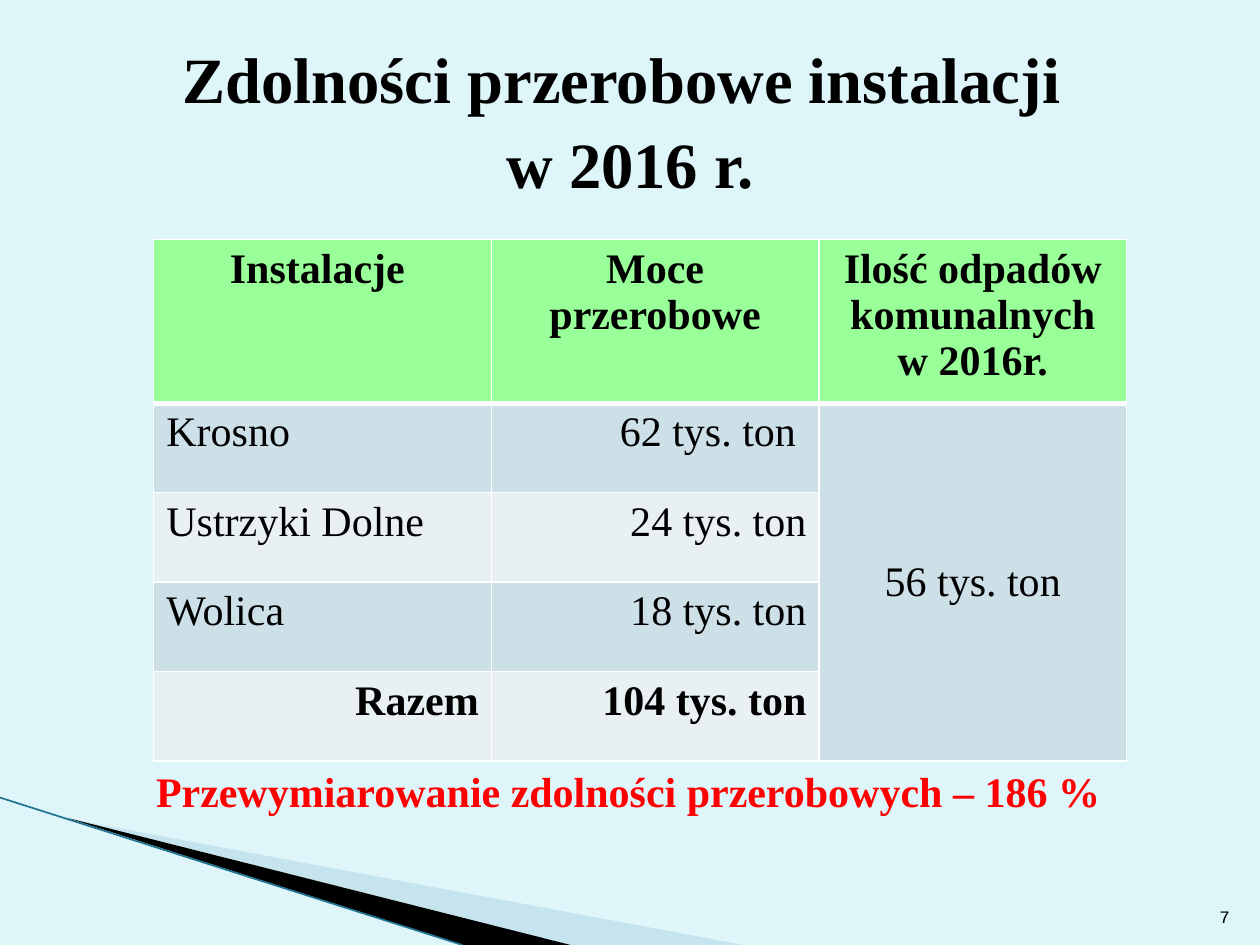
from dataclasses import dataclass

from lxml import etree
from pptx import Presentation
from pptx.dml.color import RGBColor
from pptx.enum.shapes import MSO_CONNECTOR
from pptx.enum.text import MSO_ANCHOR, PP_ALIGN
from pptx.oxml.ns import qn
from pptx.util import Inches, Pt

LEFT, MID, RIGHT = PP_ALIGN.LEFT, PP_ALIGN.CENTER, PP_ALIGN.RIGHT
TOP, CENTER, BOTTOM = MSO_ANCHOR.TOP, MSO_ANCHOR.MIDDLE, MSO_ANCHOR.BOTTOM
STRAIGHT = MSO_CONNECTOR.STRAIGHT
WIDE, HIGH = 10, 7.5


@dataclass(frozen=True)
class Theme:
    back: str = "DEF5FA"
    ink: str = "000000"
    alert: str = "FF0000"
    head: str = "99FF99"
    bands: tuple = ("CDE0E8", "E8F0F4")
    rule: str = "FFFFFF"
    wedge: str = "A0CBDC"
    edge: str = "1F7391"
    font: str = "Times New Roman"
    mono: str = "Courier New"
    title: float = 36.9
    body: float = 24
    small: float = 10


LOOK = Theme()
HEADS = ("Instalacje ", "Moce przerobowe", "Ilość odpadów komunalnych w 2016r.")
ROWS = (
    ("Krosno", "62 tys. ton "),
    ("Ustrzyki Dolne", "24 tys. ton"),
    ("Wolica", "18 tys. ton"),
    ("Razem", "104 tys. ton"),
)
WASTE = "56 tys. ton"


def rgb(code):
    return RGBColor.from_string(code)


def style(para, size, color, bold=False, align=LEFT, font=LOOK.font):
    para.alignment = align
    para.font.name = font
    para.font.size = Pt(size)
    para.font.bold = bold
    para.font.color.rgb = rgb(color)


def label(slide, box, text, size, color, anchor=TOP, **kind):
    frame = slide.shapes.add_textbox(*map(Inches, box)).text_frame
    frame.word_wrap = True
    frame.vertical_anchor = anchor
    frame.text = text
    style(frame.paragraphs[0], size, color, **kind)
    return frame.paragraphs[0]


def wedge(slide, points, color, alpha=None):
    first, *rest = [tuple(map(Inches, spot)) for spot in points]
    path = slide.shapes.build_freeform(*first)
    path.add_line_segments(rest, close=True)
    shape = path.convert_to_shape()
    shape.shadow.inherit = False
    shape.line.fill.background()
    shape.fill.solid()
    shape.fill.fore_color.rgb = rgb(color)
    if alpha:
        tint = shape.fill._xPr.find(".//" + qn("a:srgbClr"))
        etree.SubElement(tint, qn("a:alpha"), val=str(alpha * 1000))


def stroke(slide, start, end, color, width):
    line = slide.shapes.add_connector(STRAIGHT, *map(Inches, start + end))
    line.line.color.rgb = rgb(color)
    line.line.width = Pt(width)
    etree.SubElement(line._element.spPr, qn("a:effectLst"))


def border(cell, top=1, bottom=1):
    props = cell._tc.get_or_add_tcPr()
    for side, width in (("L", 1), ("R", 1), ("T", top), ("B", bottom)):
        line = etree.SubElement(props, qn("a:ln" + side), w=str(Pt(width)))
        fill = etree.SubElement(line, qn("a:solidFill"))
        etree.SubElement(fill, qn("a:srgbClr"), val=LOOK.rule)


def paint(cell, fill, top=1, bottom=1):
    border(cell, top, bottom)
    cell.fill.solid()
    cell.fill.fore_color.rgb = rgb(fill)


def write(cell, text, align, bold=False):
    cell.text = text
    style(cell.text_frame.paragraphs[0], LOOK.body, LOOK.ink, bold, align)


def grid(slide, left, top, cols, head, row):
    count = len(ROWS)
    size = (left, top, sum(cols), head + count * row)
    table = slide.shapes.add_table(
        count + 1, len(cols), *map(Inches, size)).table
    for col, width in zip(table.columns, cols):
        col.width = Inches(width)
    for line, height in zip(table.rows, [head] + [row] * count):
        line.height = Inches(height)

    # Header row, set off by a heavier rule
    for col, text in enumerate(HEADS):
        paint(table.cell(0, col), LOOK.head, bottom=3)
        write(table.cell(0, col), text, MID, True)

    # Plants and their capacity, with the total last
    for num, (name, load) in enumerate(ROWS, 1):
        total = num == count
        for col in range(len(cols)):
            band = LOOK.bands[(num - 1) % 2 if col < 2 else 0]
            paint(table.cell(num, col), band, top=3 if num == 1 else 1)
        write(table.cell(num, 0), name, RIGHT if total else LEFT, total)
        write(table.cell(num, 1), load, RIGHT, total)

    # Waste amount shared by all plants
    waste = table.cell(1, 2)
    waste.merge(table.cell(count, 2))
    waste.vertical_anchor = CENTER
    write(waste, WASTE, MID)


def main():
    deck = Presentation()
    deck.slide_width, deck.slide_height = Inches(WIDE), Inches(HIGH)
    slide = deck.slides.add_slide(deck.slide_layouts[6])
    slide.background.fill.solid()
    slide.background.fill.fore_color.rgb = rgb(LOOK.back)

    # Corner decoration
    wedge(slide, [(0.55, 6.5), (5.9, HIGH), (4.53, HIGH)], LOOK.wedge, 40)
    wedge(slide, [(0.53, 6.49), (4.53, HIGH), (3.68, HIGH)], LOOK.ink)
    stroke(slide, (0, 6.33), (3.67, HIGH), LOOK.edge, 0.95)

    # Title and page number
    title = label(slide, (0.05 * WIDE, 0.04 * HIGH, 0.9 * WIDE, 1.25),
                  "Zdolności przerobowe instalacji \vw 2016 r.",
                  LOOK.title, LOOK.ink, CENTER, bold=True, align=MID)
    title.line_spacing = 1.09
    label(slide, (9.46, 7.01, 0.4, 0.4), "7", LOOK.small, LOOK.ink,
          BOTTOM, align=RIGHT, font=LOOK.mono)

    # Table and conclusion
    grid(slide, 1.22, 1.9, (2.68, 2.6, 2.44), 1.21, 0.71)
    label(slide, (1.14, 6.03, 7.87, 0.5),
          "Przewymiarowanie zdolności przerobowych – 186 %",
          LOOK.body, LOOK.alert, bold=True)

    deck.save("out.pptx")


if __name__ == "__main__":
    main()
